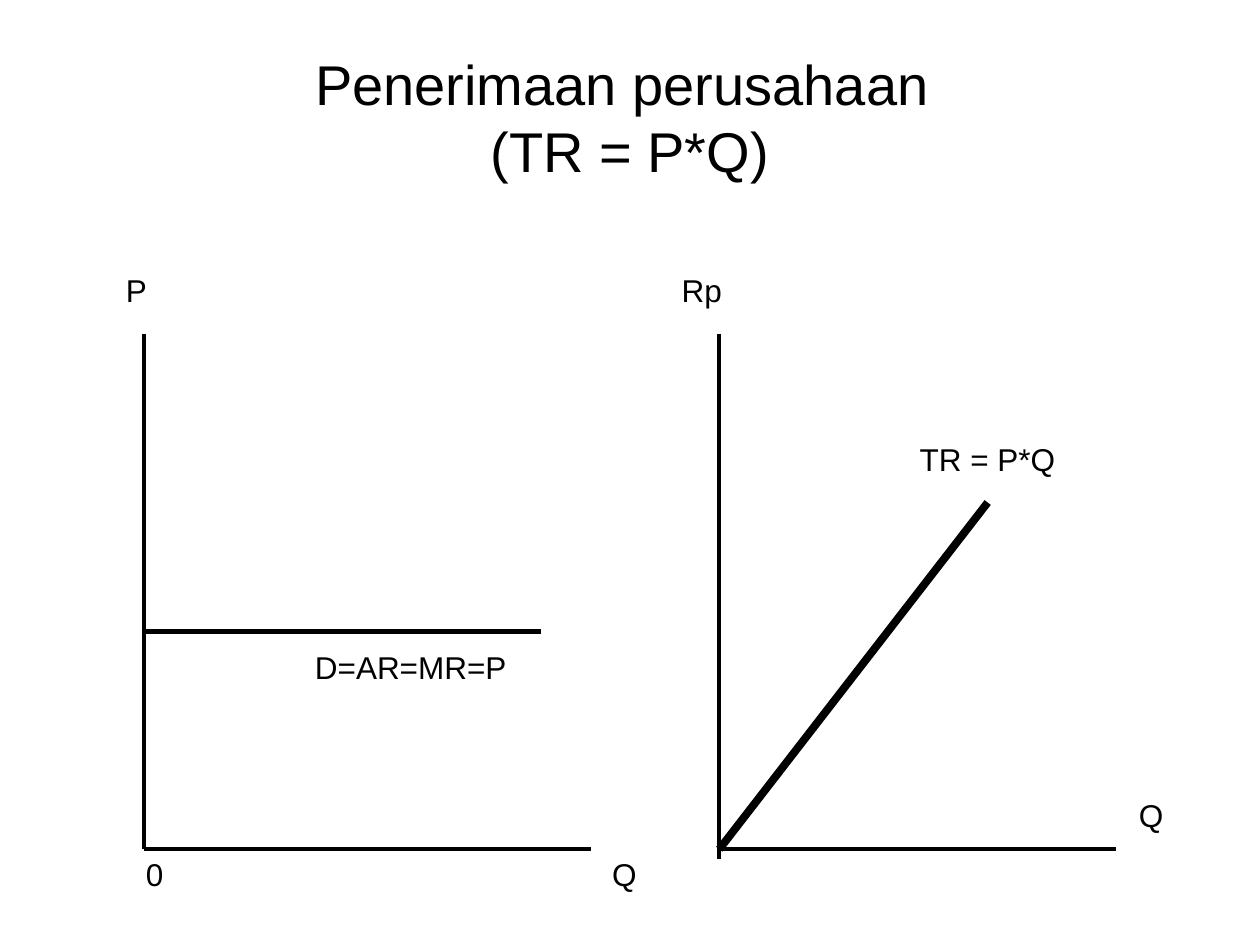
"""Build a slide with a firm's demand and total revenue diagrams."""
from dataclasses import dataclass

from lxml.etree import SubElement
from pptx import Presentation
from pptx.dml.color import RGBColor
from pptx.enum.shapes import MSO_CONNECTOR as Connector
from pptx.enum.text import MSO_ANCHOR as Anchor, MSO_AUTO_SIZE as AutoSize, PP_ALIGN as Align
from pptx.oxml.ns import qn
from pptx.util import Cm, Pt


@dataclass(frozen=True)
class Theme:
    ink: RGBColor = RGBColor(0, 0, 0)
    font: str = "Arial"
    title_size: float = 32
    label_size: float = 18
    axis_width: float = 2.25
    demand_width: float = 3
    revenue_width: float = 4.5


THEME = Theme()
AXIS_TOP, BASELINE = 6.73, 17.12
PRICE_AXIS, RUPIAH_AXIS = 2.9, 14.5
PRICE_LEVEL = 12.73
HEADING_TOP, LABEL_HEIGHT = 5.33, 1.02


def apply_format(target, values):
    for name, value in values.items():
        setattr(target, name, value)


def write_text(frame, wording, size, align):
    frame.text = wording
    paragraph = frame.paragraphs[0]
    paragraph.alignment = align
    for run in paragraph.runs:
        apply_format(run.font, {"name": THEME.font, "size": Pt(size)})
        run.font.color.rgb = THEME.ink


def set_title(slide, wording):
    title = slide.shapes.title
    apply_format(title, {"left": Cm(1.27), "top": Cm(0.76),
                         "width": Cm(22.86), "height": Cm(3.18)})
    apply_format(title.text_frame, {"vertical_anchor": Anchor.MIDDLE,
                                    "auto_size": AutoSize.NONE, "word_wrap": True})
    write_text(title.text_frame, wording, THEME.title_size, Align.CENTER)


def add_line(slide, start, end, width):
    line = slide.shapes.add_connector(Connector.STRAIGHT, *map(Cm, start + end))
    line.line.color.rgb = THEME.ink
    line.line.width = Pt(width)
    SubElement(line._element.spPr, qn("a:effectLst"))


def add_axes(slide, axis, bottom, right):
    add_line(slide, (axis, AXIS_TOP), (axis, bottom), THEME.axis_width)
    add_line(slide, (axis, BASELINE), (right, BASELINE), THEME.axis_width)


def add_label(slide, wording, left, top, width):
    label = slide.shapes.add_textbox(*map(Cm, (left, top, width, LABEL_HEIGHT)))
    apply_format(label.text_frame, {"word_wrap": True,
                                    "auto_size": AutoSize.SHAPE_TO_FIT_TEXT})
    write_text(label.text_frame, wording, THEME.label_size, Align.LEFT)


def main():
    deck = Presentation()
    apply_format(deck, {"slide_width": Cm(25.4), "slide_height": Cm(19.05)})
    slide = deck.slides.add_slide(deck.slide_layouts.get_by_name("Title Only"))
    set_title(slide, "Penerimaan perusahaan \v(TR = P*Q)")

    add_axes(slide, PRICE_AXIS, BASELINE, 11.91)
    add_axes(slide, RUPIAH_AXIS, 17.32, 22.5)
    add_line(slide, (PRICE_AXIS, PRICE_LEVEL), (10.9, PRICE_LEVEL), THEME.demand_width)
    add_line(slide, (RUPIAH_AXIS, BASELINE), (19.91, 10.13), THEME.revenue_width)

    labels = (
        ("P", 2.29, HEADING_TOP, 1.8),
        ("Q", 12.09, BASELINE, 1),
        ("Rp", 13.49, HEADING_TOP, 3),
        ("Q", 22.71, 15.93, 1.8),
        ("TR = P*Q", 18.29, 8.74, 5.21),
        ("D=AR=MR=P", 6.1, 12.93, 6.81),
        ("0", 2.69, BASELINE, 1),
    )
    for label in labels:
        add_label(slide, *label)
    deck.save("out.pptx")


if __name__ == "__main__":
    main()
